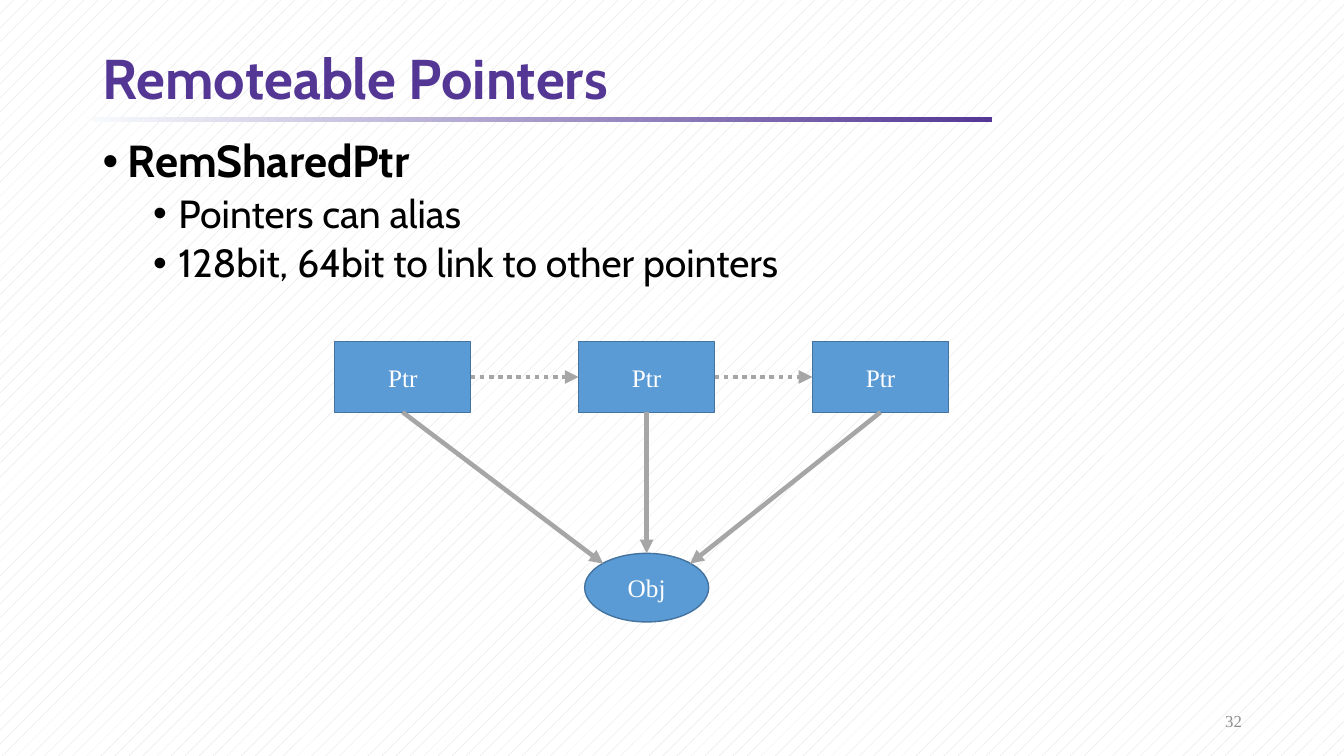
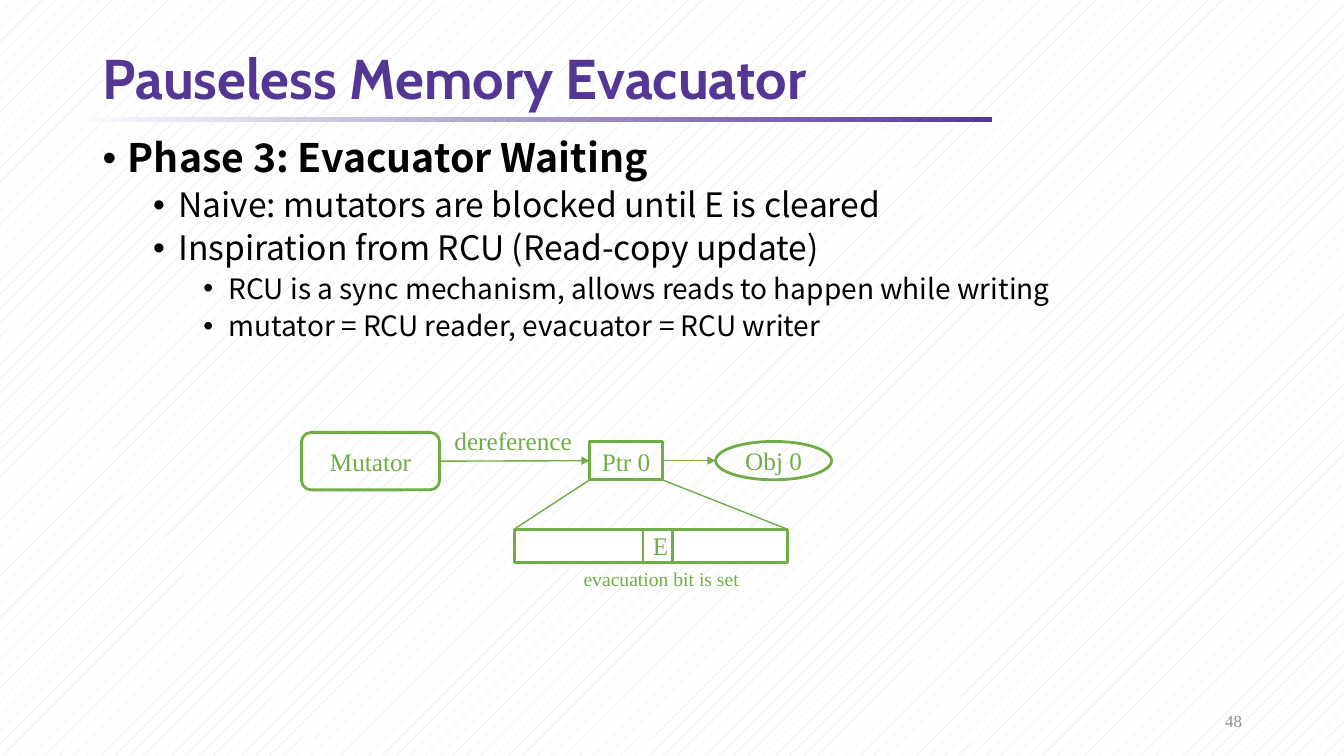
import pptx
import pptx.dml.color
import pptx.enum.dml
import pptx.enum.shapes
import pptx.enum.text
import pptx.oxml.ns
import pptx.util
from lxml import etree

COLORS = {
    "paper": "FFFFFF", "hatch": "D9D9D9", "purple": "543795", "pale": "F7FAFD",
    "ink": "000000", "number": "8C8C8C", "blue": "5B9BD5", "navy": "43739E",
    "gray": "A6A6A6", "green": "70AD47",
}
WIDTH, HEIGHT = pptx.util.Inches(13.33), pptx.util.Inches(7.5)
SERIF = "Times New Roman"
SHAPE = pptx.enum.shapes.MSO_SHAPE
ALIGN = pptx.enum.text.PP_ALIGN
ANCHOR = pptx.enum.text.MSO_ANCHOR
TOP, LEFT, BOTTOM, RIGHT = range(4)
MARGIN = 6.9

# Formats
TITLE = {"name": "Cabin", "size": 40, "bold": True, "color": "purple"}
NUMBER = {"name": SERIF, "size": 12, "color": "number"}
BLUE = {"fill": "blue", "line": "navy", "width": 1,
        "font": {"name": SERIF, "size": 18, "color": "paper"}}
GREEN = {"fill": None, "line": "green", "width": 2,
         "font": {"name": SERIF, "size": 18, "color": "green"}}
GREEN_ON_WHITE = {**GREEN, "fill": "paper"}


# Basics: positions are percentages of the slide's width and height
def rgb(name):
    return pptx.dml.color.RGBColor.from_string(COLORS[name])


def at(x, y):
    return round(WIDTH * x / 100), round(HEIGHT * y / 100)


def box(x, y, w, h):
    return at(x, y) + at(w, h)


def corner(sp, across, down):
    return sp.left + round(sp.width * across), sp.top + round(sp.height * down)


def set_all(obj, **values):
    for key, value in values.items():
        setattr(obj, key, value)


def write(p, text, font):
    r = p.add_run()
    r.text = text
    for key, value in font.items():
        if key == "color":
            r.font.color.rgb = rgb(value)
        else:
            setattr(r.font, key, pptx.util.Pt(value) if key == "size" else value)


# Elements
def add_text(s, area, text, font, wrap=True, align=ALIGN.LEFT, anchor=ANCHOR.TOP):
    tf = s.shapes.add_textbox(*box(*area)).text_frame
    set_all(tf, word_wrap=wrap, vertical_anchor=anchor)
    tf.paragraphs[0].alignment = align
    write(tf.paragraphs[0], text, font)


def add_bullets(s, area, font, sizes, items):
    tf = s.shapes.add_textbox(*box(*area)).text_frame
    tf.word_wrap = True
    for i, (level, text) in enumerate(items):
        p = tf.add_paragraph() if i else tf.paragraphs[0]
        pPr = p._p.get_or_add_pPr()
        pPr.set("marL", str(pptx.util.Inches(0.25 + 0.5 * level)))
        pPr.set("indent", str(-pptx.util.Inches(0.25)))
        for tag, key, value in (("a:buFont", "typeface", "Arial"),
                                ("a:buChar", "char", "•")):
            etree.SubElement(pPr, pptx.oxml.ns.qn(tag)).set(key, value)
        set_all(p, level=level, line_spacing=0.9,
                space_before=pptx.util.Pt(5 if i else 0))
        write(p, text, {"name": font, "size": sizes[level],
                        "bold": level == 0, "color": "ink"})


def add_node(s, kind, area, text, style, anchor=ANCHOR.MIDDLE):
    sp = s.shapes.add_shape(kind, *box(*area))
    sp.shadow.inherit = False
    if style["fill"]:
        sp.fill.solid()
        sp.fill.fore_color.rgb = rgb(style["fill"])
    else:
        sp.fill.background()
    sp.line.color.rgb = rgb(style["line"])
    sp.line.width = pptx.util.Pt(style["width"])
    sp.text_frame.vertical_anchor = anchor
    if text:
        p = sp.text_frame.paragraphs[0]
        p.alignment = ALIGN.CENTER
        write(p, text, style["font"])
    return sp


def add_line(s, start, end, color, width, dash=None, arrow=True):
    """Each end is a point or a (shape, side) pair to join."""
    ends = [(0, 0) if hasattr(e[0], "shape_id") else e for e in (start, end)]
    c = s.shapes.add_connector(pptx.enum.shapes.MSO_CONNECTOR.STRAIGHT,
                               *ends[0], *ends[1])
    for e, join in ((start, c.begin_connect), (end, c.end_connect)):
        if hasattr(e[0], "shape_id"):
            join(*e)
    c.line.color.rgb = rgb(color)
    c.line.width = pptx.util.Pt(width)
    if dash:
        c.line.dash_style = dash
    spPr = c._element.spPr
    if arrow:
        ln = spPr.find(pptx.oxml.ns.qn("a:ln"))
        etree.SubElement(ln, pptx.oxml.ns.qn("a:tailEnd")).set("type", "triangle")
    etree.SubElement(spPr, pptx.oxml.ns.qn("a:effectLst"))


# Shared slide frame
def set_background(prs):
    fill = prs.slide_master.background.fill
    fill.patterned()
    fill.pattern = pptx.enum.dml.MSO_PATTERN.PERCENT_5
    fill.fore_color.rgb = rgb("hatch")
    fill.back_color.rgb = rgb("paper")


def add_slide(prs, title, number):
    s = prs.slides.add_slide(prs.slide_layouts[5])
    rule = s.shapes.add_shape(SHAPE.RECTANGLE, *box(MARGIN, 15.47, 66.9, 0.67))
    rule.shadow.inherit = False
    rule.line.fill.background()
    rule.fill.gradient()
    rule.fill.gradient_angle = 0
    for stop, position, color in zip(rule.fill.gradient_stops, (0, 1),
                                     ("pale", "purple")):
        stop.position = position
        stop.color.rgb = rgb(color)
    add_text(s, (70.65, 92.67, 22.5, 5.33), str(number), NUMBER,
             align=ALIGN.RIGHT, anchor=ANCHOR.MIDDLE)

    sp = s.shapes.title
    left, top, width, height = box(MARGIN, 5.73, 86.25, 10)
    set_all(sp, left=left, top=top, width=width, height=height)
    set_all(sp.text_frame, vertical_anchor=ANCHOR.MIDDLE, word_wrap=True,
            auto_size=pptx.enum.text.MSO_AUTO_SIZE.NONE)
    p = sp.text_frame.paragraphs[0]
    set_all(p, alignment=ALIGN.LEFT, line_spacing=0.9)
    write(p, title, TITLE)
    return s


# Slides
def pointers_slide(prs):
    s = add_slide(prs, "Remoteable Pointers", 32)
    add_bullets(s, (MARGIN, 17.73, 86.25, 72.4), "Cabin", (32, 28), [
        (0, "RemSharedPtr"),
        (1, "Pointers can alias"),
        (1, "128bit, 64bit to link to other pointers"),
    ])
    obj = add_node(s, SHAPE.OVAL, (43.5, 73.2, 9.23, 9.07), "Obj", BLUE)
    ptrs = [add_node(s, SHAPE.RECTANGLE, (x, 45.2, 10.13, 9.33), "Ptr", BLUE)
            for x in (24.9, 43.05, 60.45)]
    for a, b in zip(ptrs, ptrs[1:]):
        add_line(s, (a, RIGHT), (b, LEFT), "gray", 3.25,
                 pptx.enum.dml.MSO_LINE.ROUND_DOT)
    # Arrows reach the oval at its two upper diagonals and its top
    targets = (corner(obj, 0.15, 0.15), (obj, TOP), corner(obj, 0.85, 0.15))
    for ptr, target in zip(ptrs, targets):
        add_line(s, (ptr, BOTTOM), target, "gray", 3.25)


def evacuator_slide(prs):
    s = add_slide(prs, "Pauseless Memory Evacuator", 48)
    add_bullets(s, (MARGIN, 17.73, 86.8, 35.47), "Noto Sans CJK SC", (28, 24, 20), [
        (0, "Phase 3: Evacuator Waiting"),
        (1, "Naive: mutators are blocked until E is cleared"),
        (1, "Inspiration from RCU (Read-copy update)"),
        (2, "RCU is a sync mechanism, allows reads to happen while writing"),
        (2, "mutator = RCU reader, evacuator = RCU writer"),
    ])
    # Dereference chain
    obj = add_node(s, SHAPE.OVAL, (53.25, 58.4, 8.63, 5.07), "Obj 0", GREEN)
    mutator = add_node(s, SHAPE.ROUNDED_RECTANGLE, (22.43, 57.2, 10.28, 7.6),
                       "Mutator", GREEN)
    ptr = add_node(s, SHAPE.RECTANGLE, (43.88, 58.4, 5.4, 5.07), "Ptr 0", GREEN,
                   ANCHOR.TOP)
    add_line(s, (mutator, RIGHT), (ptr, LEFT), "green", 1)
    add_line(s, (ptr, RIGHT), corner(obj, 0, 0.5), "green", 1)
    add_text(s, (33.08, 55.6, 10.35, 5.33), "dereference", GREEN["font"], wrap=False)
    # Pointer word with its evacuation bit
    word = add_node(s, SHAPE.RECTANGLE, (38.25, 70, 20.33, 4.4), "", GREEN_ON_WHITE)
    add_node(s, SHAPE.RECTANGLE, (47.85, 70, 2.18, 4.4), "E", GREEN_ON_WHITE)
    add_text(s, (42.68, 74.27, 13.2, 4.53), "evacuation bit is set",
             {**GREEN["font"], "size": 14}, wrap=False)
    for side in (0, 1):
        add_line(s, corner(ptr, side, 1), corner(word, side, 0), "green", 1,
                 arrow=False)


def main():
    prs = pptx.Presentation()
    set_all(prs, slide_width=WIDTH, slide_height=HEIGHT)
    set_background(prs)
    pointers_slide(prs)
    evacuator_slide(prs)
    prs.save("out.pptx")


if __name__ == "__main__":
    main()
